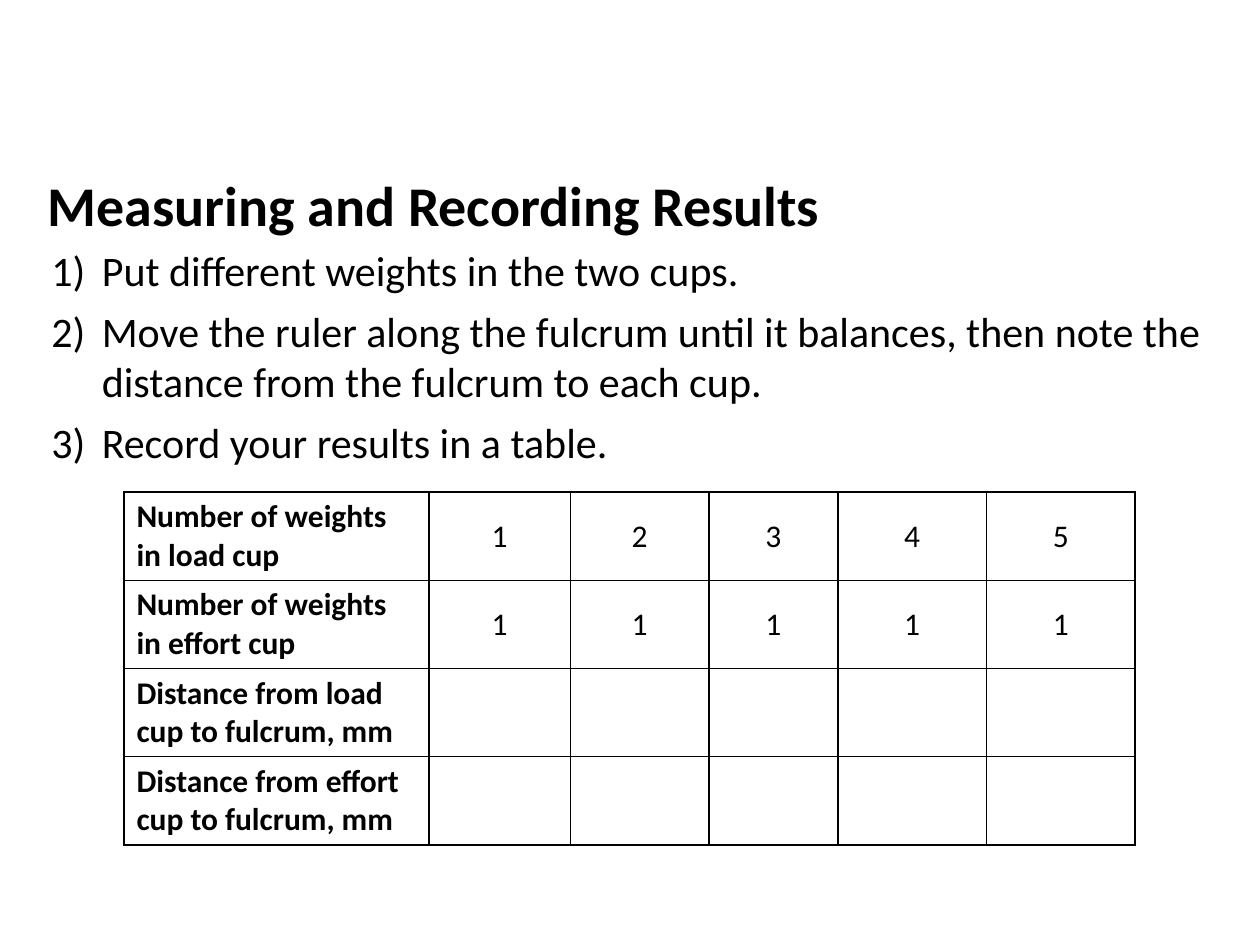
import dataclasses

import lxml.etree
import pptx
import pptx.dml.color
import pptx.enum.text
import pptx.oxml.ns
import pptx.util

Pt = pptx.util.Pt
qn = pptx.oxml.ns.qn
Align = pptx.enum.text.PP_ALIGN
Anchor = pptx.enum.text.MSO_ANCHOR


@dataclasses.dataclass(frozen=True)
class Theme:
    font: str = "Calibri"
    ink: str = "000000"
    title_size: int = 32
    body_size: int = 24
    table_size: int = 18


THEME = Theme()
STEPS = [
    "Put different weights in the two cups.",
    "Move the ruler along the fulcrum until it balances, then note the "
    "distance from the fulcrum to each cup.",
    "Record your results in a table.",
]
RESULTS = [
    ["Number of weights in load cup", "1", "2", "3", "4", "5"],
    ["Number of weights in effort cup", "1", "1", "1", "1", "1"],
    ["Distance from load cup to fulcrum, mm", "", "", "", "", ""],
    ["Distance from effort cup to fulcrum, mm", "", "", "", "", ""],
]
COLUMN_WIDTHS = [174.3, 80.8, 79.3, 73.6, 85, 85]


def set_attributes(target, values):
    for name, value in values.items():
        setattr(target, name, value)


def format_font(paragraph, size, bold=False):
    set_attributes(paragraph.font,
                   {"name": THEME.font, "size": Pt(size), "bold": bold})
    paragraph.font.color.rgb = pptx.dml.color.RGBColor.from_string(THEME.ink)


def add_number(paragraph, indent):
    """Give the paragraph a hanging 1), 2), 3) number."""
    properties = paragraph._p.get_or_add_pPr()
    properties.set("marL", str(Pt(indent)))
    properties.set("indent", str(-Pt(indent)))
    lxml.etree.SubElement(properties, qn("a:buFont"), typeface="+mj-lt")
    lxml.etree.SubElement(properties, qn("a:buAutoNum"), type="arabicParenR")


def add_borders(cell):
    properties = cell._tc.get_or_add_tcPr()
    for position, side in enumerate(("lnL", "lnR", "lnT", "lnB")):
        line = lxml.etree.Element(qn("a:" + side), w=str(Pt(1)))
        fill = lxml.etree.SubElement(line, qn("a:solidFill"))
        lxml.etree.SubElement(fill, qn("a:srgbClr"), val=THEME.ink)
        properties.insert(position, line)


def place_title(slide, left, top, width, height):
    title = slide.shapes.title
    set_attributes(title, {"left": Pt(left), "top": Pt(top),
                           "width": Pt(width), "height": Pt(height)})
    frame = title.text_frame
    frame.text = "Measuring and Recording Results"
    set_attributes(frame, {"word_wrap": True, "vertical_anchor": Anchor.TOP,
                           "auto_size": pptx.enum.text.MSO_AUTO_SIZE.NONE})
    frame.paragraphs[0].alignment = Align.LEFT
    format_font(frame.paragraphs[0], THEME.title_size, bold=True)


def place_steps(slide, left, top, width, height):
    box = slide.shapes.add_textbox(Pt(left), Pt(top), Pt(width), Pt(height))
    frame = box.text_frame
    frame.word_wrap = True
    for index, step in enumerate(STEPS):
        paragraph = frame.add_paragraph() if index else frame.paragraphs[0]
        paragraph.text = step
        paragraph.space_after = Pt(6)
        add_number(paragraph, indent=28.8)
        format_font(paragraph, THEME.body_size)


def place_results(slide, left, top, height):
    table = slide.shapes.add_table(
        len(RESULTS), len(COLUMN_WIDTHS), Pt(left), Pt(top),
        Pt(sum(COLUMN_WIDTHS)), Pt(height)).table
    set_attributes(table, {"first_row": False, "horz_banding": False})
    for column, width in zip(table.columns, COLUMN_WIDTHS):
        column.width = Pt(width)
    for row_index, row in enumerate(RESULTS):
        table.rows[row_index].height = Pt(height / len(RESULTS))
        for column_index, text in enumerate(row):
            is_label = column_index == 0
            cell = table.cell(row_index, column_index)
            cell.text = text
            cell.fill.background()
            set_attributes(cell, {"vertical_anchor": Anchor.MIDDLE,
                                  "margin_top": Pt(3), "margin_bottom": Pt(3)})
            paragraph = cell.text_frame.paragraphs[0]
            paragraph.alignment = Align.LEFT if is_label else Align.CENTER
            format_font(paragraph, THEME.table_size, bold=is_label)
            add_borders(cell)


def main():
    presentation = pptx.Presentation()
    set_attributes(presentation,
                   {"slide_width": Pt(720), "slide_height": Pt(540)})
    title_only = presentation.slide_layouts[5]
    slide = presentation.slides.add_slide(title_only)
    # Heading, numbered steps, then the table to fill in
    place_title(slide, left=20, top=93.6, width=510, height=46)
    place_steps(slide, left=22.3, top=136, width=675, height=171)
    place_results(slide, left=70.8, top=281.2, height=201.6)
    presentation.save("out.pptx")


if __name__ == "__main__":
    main()
